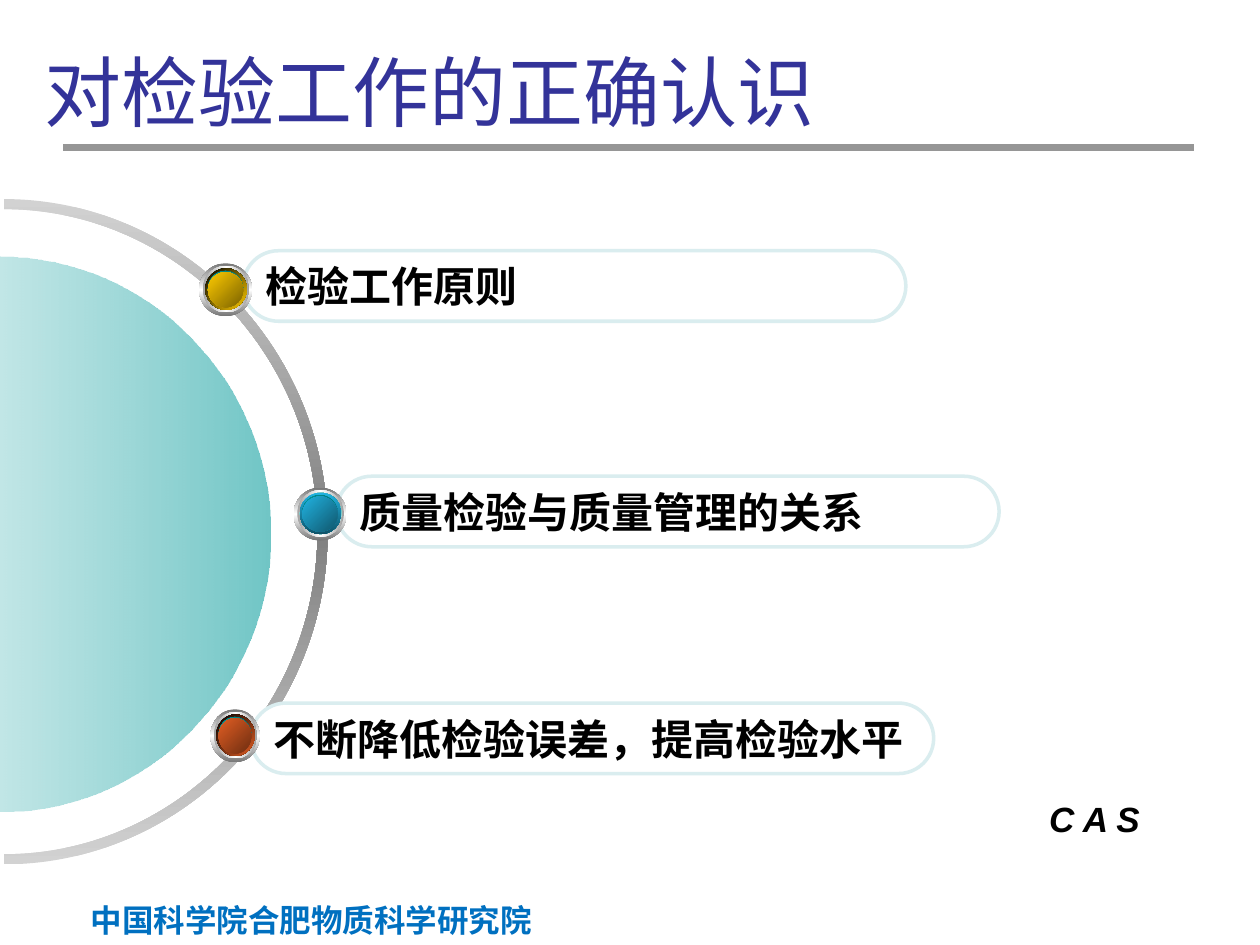
from dataclasses import dataclass

from lxml import etree
from pptx import Presentation
from pptx.dml.color import RGBColor
from pptx.enum import shapes, text
from pptx.oxml import ns
from pptx.util import Inches, Pt

WHITE = RGBColor(0xFF, 0xFF, 0xFF)
BLACK = RGBColor(0, 0, 0)
RULE_GRAY = RGBColor(0x96, 0x96, 0x96)
RING_LIGHT = RGBColor(0xD2, 0xD2, 0xD2)
RING_DARK = RGBColor(0x80, 0x80, 0x80)
RIM_OUTER = RGBColor(0x76, 0x76, 0x76)
RIM_INNER = RGBColor(0xA2, 0xA2, 0xA2)
TEAL = RGBColor(0, 0x99, 0x99)
TEAL_DARK = RGBColor(0, 0x75, 0x75)
PILL_EDGE = RGBColor(0xDA, 0xED, 0xEF)
TITLE_BLUE = RGBColor(0x33, 0x33, 0x99)
FOOTER_BLUE = RGBColor(0, 0x70, 0xC0)
YELLOW = RGBColor(0xFF, 0xCC, 0)
YELLOW_DARK = RGBColor(0x7C, 0x63, 0)
BLUE = RGBColor(0x21, 0xB3, 0xE1)
BLUE_RIM = RGBColor(0x0F, 0x53, 0x68)
BLUE_DARK = RGBColor(0x10, 0x57, 0x6D)
ORANGE = RGBColor(0xE3, 0x5E, 0x23)
ORANGE_DARK = RGBColor(0x6E, 0x2E, 0x11)

CJK = "Noto Sans CJK SC"
BALL = 0.42
KAPPA = 0.55  # Bezier handle length for a quarter ellipse


@dataclass
class Topic:
    label: str
    pill: tuple[float, float, float]  # left, top, width
    ball: tuple[float, float, float]  # left, top, width
    rim: tuple[RGBColor, RGBColor]
    rim_angle: int
    core: tuple[RGBColor, RGBColor]


TOPICS = [
    Topic("检验工作原则", (1.93, 1.99, 5.26), (1.58, 2.09, 0.42),
          (BLACK, YELLOW), 45, (YELLOW, YELLOW_DARK)),
    Topic("质量检验与质量管理的关系", (2.67, 3.78, 5.26), (2.33, 3.87, 0.42),
          (BLUE, BLUE_RIM), 90, (BLUE, BLUE_DARK)),
    Topic("不断降低检验误差，提高检验水平", (1.99, 5.58, 5.42), (1.67, 5.63, 0.39),
          (BLACK, ORANGE), 45, (ORANGE, ORANGE_DARK)),
]


def write(tf, words: str, *, size: float, color: RGBColor, font: str = CJK,
          east: str = CJK, bold: bool = False, italic: bool = False,
          align=text.PP_ALIGN.LEFT, anchor=text.MSO_ANCHOR.TOP,
          wrap: bool = True) -> None:
    tf.word_wrap = wrap
    tf.vertical_anchor = anchor
    p = tf.paragraphs[0]
    p.alignment = align
    r = p.add_run()
    r.text = words
    f = r.font
    f.size, f.bold, f.italic, f.name = Pt(size), bold, italic, font
    f.color.rgb = color
    etree.SubElement(f._element, ns.qn("a:ea")).set("typeface", east)


def shade(sp, colors: tuple, angle: int, alphas: tuple = ()) -> None:
    """Fill with evenly spaced gradient stops; angle runs clockwise."""
    sp.shadow.inherit = False
    sp.line.fill.background()
    sp.fill.gradient()
    grad = sp._element.spPr.find(ns.qn("a:gradFill"))
    stops = grad.find(ns.qn("a:gsLst"))
    for old in list(stops):
        stops.remove(old)
    for i, color in enumerate(colors):
        gs = etree.SubElement(stops, ns.qn("a:gs"))
        gs.set("pos", str(round(100000 * i / (len(colors) - 1))))
        clr = etree.SubElement(gs, ns.qn("a:srgbClr"))
        clr.set("val", str(color))
        if alphas:
            etree.SubElement(clr, ns.qn("a:alpha")).set("val", str(alphas[i] * 1000))
    grad.find(ns.qn("a:lin")).set("ang", str(angle * 60000))


def half_ellipse(cx: float, cy: float, rx: float, ry: float) -> list:
    """Bezier points of the right half of an ellipse, top to bottom."""
    kx, ky = KAPPA * rx, KAPPA * ry
    return [(cx, cy - ry), (cx + kx, cy - ry), (cx + rx, cy - ky), (cx + rx, cy),
            (cx + rx, cy + ky), (cx + kx, cy + ry), (cx, cy + ry)]


def add_curves(slide, box: tuple, arcs: list):
    """Join Bezier arcs into one outline in a frame turned by 90 degrees."""
    left, top, width, height = box
    mid_x, mid_y = left + width / 2, top + height / 2
    builder = slide.shapes.build_freeform(0, 0)
    builder.add_line_segments([(Inches(width), Inches(height))])
    sp = builder.convert_to_shape()
    sp.left, sp.top, sp.width, sp.height = map(Inches, box)
    sp.rotation = 90
    outline = sp._element.spPr.find(".//" + ns.qn("a:path"))
    for old in list(outline):
        outline.remove(old)

    def segment(tag: str, points: list) -> None:
        node = etree.SubElement(outline, ns.qn(tag))
        for x, y in points:
            pt = etree.SubElement(node, ns.qn("a:pt"))
            pt.set("x", str(Inches(width / 2 + y - mid_y)))
            pt.set("y", str(Inches(height / 2 - x + mid_x)))

    for i, arc in enumerate(arcs):
        segment("a:lnTo" if i else "a:moveTo", arc[:1])
        segment("a:cubicBezTo", arc[1:4])
        segment("a:cubicBezTo", arc[4:])
    etree.SubElement(outline, ns.qn("a:close"))
    return sp


def add_pill(slide, topic: Topic) -> None:
    left, top, width = topic.pill
    sp = slide.shapes.add_shape(shapes.MSO_SHAPE.ROUNDED_RECTANGLE, Inches(left),
                                Inches(top), Inches(width), Inches(0.56))
    sp.adjustments[0] = 0.5
    sp.shadow.inherit = False
    sp.fill.solid()
    sp.fill.fore_color.rgb = WHITE
    sp.line.color.rgb = PILL_EDGE
    sp.line.width = Pt(2)
    write(sp.text_frame, topic.label, size=24, color=BLACK, bold=True,
          anchor=text.MSO_ANCHOR.MIDDLE, wrap=False)


def add_ball(slide, topic: Topic) -> None:
    left, top, width = topic.ball
    squeeze = width / BALL
    layers = [  # inset across, inset down, diameter, colours, angle
        (0, 0, BALL, (RIM_OUTER, WHITE, RIM_OUTER), 90),
        (0.03, 0.02, 0.37, (RIM_INNER, WHITE, RIM_INNER), 0),
        (0.05, 0.04, 0.33, (WHITE, TEAL, WHITE), 45),
        (0.05, 0.04, 0.33, topic.rim, topic.rim_angle),
        (0.07, 0.06, 0.28, (TEAL_DARK, TEAL, TEAL_DARK), 315),
        (0.07, 0.07, 0.28, topic.core, 45),
    ]
    group = slide.shapes.add_group_shape()
    for dx, dy, size, colors, angle in layers:
        sp = group.shapes.add_shape(
            shapes.MSO_SHAPE.OVAL, Inches(left + dx * squeeze),
            Inches(top + dy), Inches(size * squeeze), Inches(size))
        shade(sp, colors, angle)


def add_note(slide, box: tuple, words: str, **fmt) -> None:
    sp = slide.shapes.add_textbox(*map(Inches, box))
    write(sp.text_frame, words, font="Arial", bold=True, **fmt)
    sp.text_frame.auto_size = text.MSO_AUTO_SIZE.SHAPE_TO_FIT_TEXT


def main() -> None:
    prs = Presentation()
    prs.slide_width, prs.slide_height = Inches(10), Inches(7.5)
    s = prs.slides.add_slide(prs.slide_layouts[5])

    # Title and rule
    title = s.shapes.title
    title.left, title.top, title.width, title.height = map(Inches, (0.25, 0.3, 9, 1.25))
    write(title.text_frame, "对检验工作的正确认识", size=44, color=TITLE_BLUE,
          font="Noto Sans CJK JP", east="Noto Sans CJK JP")
    rule = s.shapes.add_connector(shapes.MSO_CONNECTOR.STRAIGHT, Inches(0.5),
                                  Inches(1.17), Inches(9.48), Inches(1.17))
    rule.line.color.rgb = RULE_GRAY
    rule.line.width = Pt(3.6)
    etree.SubElement(rule._element.spPr, ns.qn("a:effectLst"))

    # Footer and initials
    add_note(s, (0.59, 7.1, 3.73, 0.4), "中国科学院合肥物质科学研究院", size=18,
             color=FOOTER_BLUE, align=text.PP_ALIGN.RIGHT)
    add_note(s, (8.15, 6.28, 1.02, 0.43), " C A S", size=20, color=BLACK,
             italic=True, wrap=False)

    # Ring, topics and half disc
    ring = add_curves(s, (-2.65, 1.61, 5.28, 5.22),
                      [half_ellipse(0.03, 4.22, 2.49, 2.56),
                       half_ellipse(0.03, 4.22, 2.57, 2.64)[::-1]])
    shade(ring, (RING_LIGHT, RING_DARK, RING_LIGHT), 0)
    for topic in reversed(TOPICS):
        add_pill(s, topic)
    for topic in TOPICS:
        add_ball(s, topic)
    disc = add_curves(s, (-2.21, 2.09, 4.41, 4.3),
                      [half_ellipse(0, 4.24, 2.15, 2.2)])
    shade(disc, (TEAL, WHITE), 90, alphas=(56, 48))

    prs.save("out.pptx")


if __name__ == "__main__":
    main()
